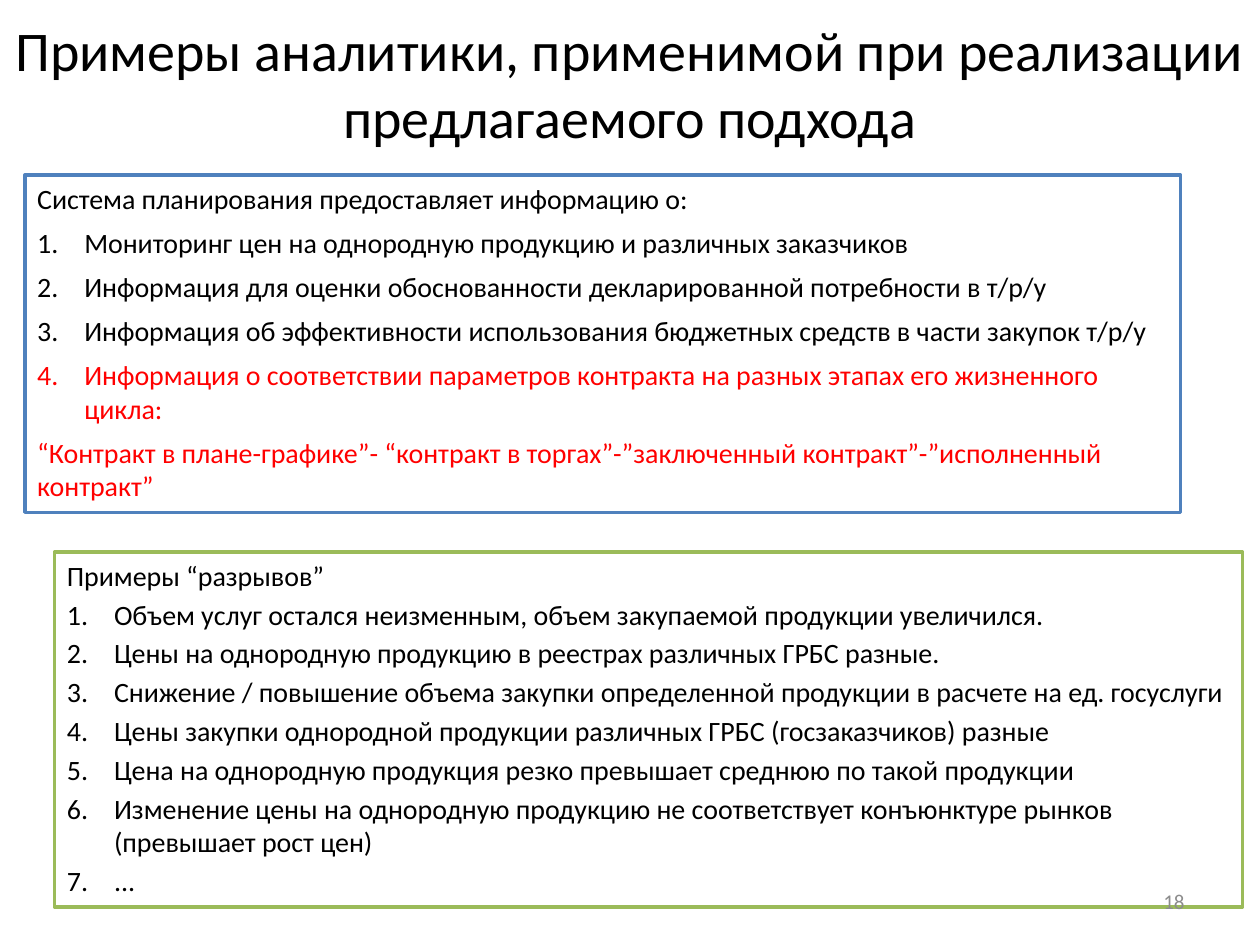
import pptx
import pptx.dml.color
import pptx.enum.shapes
import pptx.enum.text
import pptx.oxml
import pptx.oxml.ns
import pptx.util
from pptx.util import Cm

COLORS = {
    "text": "000000",
    "accent": "FF0000",
    "page": "8C8C8C",
    "paper": "FFFFFF",
    "blue": "4F81BD",
    "green": "9BBB59",
}
FONT = "Calibri"
ALIGN = pptx.enum.text.PP_ALIGN
ANCHOR = pptx.enum.text.MSO_ANCHOR
INDENT = Cm(0.95)

TITLE = "Примеры аналитики, применимой при реализации предлагаемого подхода"
PAGE_NUMBER = "18"

PANELS = [
    {
        "box": (1.1, 11.13, 23.95, 7.16),
        "line": "green",
        "space": 3,
        "paragraphs": [
            ("Примеры “разрывов”", False, "text"),
            ("Объем услуг остался неизменным, объем закупаемой продукции увеличился.", True, "text"),
            ("Цены на однородную продукцию в реестрах различных ГРБС разные.", True, "text"),
            ("Снижение / повышение объема закупки определенной продукции в расчете на ед. госуслуги", True, "text"),
            ("Цены закупки однородной продукции различных ГРБС (госзаказчиков) разные", True, "text"),
            ("Цена на однородную продукция резко превышает среднюю по такой продукции", True, "text"),
            ("Изменение цены на однородную продукцию не соответствует конъюнктуре рынков (превышает рост цен)", True, "text"),
            ("...", True, "text"),
        ],
    },
    {
        "box": (0.5, 3.53, 23.3, 6.8),
        "line": "blue",
        "space": 6,
        "paragraphs": [
            ("Система планирования предоставляет информацию о:", False, "text"),
            ("Мониторинг цен на однородную продукцию и различных заказчиков", True, "text"),
            ("Информация для оценки обоснованности декларированной потребности в т/р/у", True, "text"),
            ("Информация об эффективности использования бюджетных средств в части закупок т/р/у", True, "text"),
            ("Информация о соответствии параметров контракта на разных этапах его жизненного цикла:", True, "accent"),
            ("“Контракт в плане-графике”- “контракт в торгах”-”заключенный контракт”-”исполненный контракт”", False, "accent"),
        ],
    },
]


def color(name):
    return pptx.dml.color.RGBColor.from_string(COLORS[name])


def write(paragraph, text, size, color_name, alignment):
    paragraph.text = text
    paragraph.alignment = alignment
    paragraph.font.name = FONT
    paragraph.font.size = pptx.util.Pt(size)
    paragraph.font.color.rgb = color(color_name)


def number(paragraph):
    properties = paragraph._p.get_or_add_pPr()
    properties.set("marL", str(INDENT))
    properties.set("indent", str(-INDENT))
    bullet = pptx.oxml.parse_xml(
        f'<a:buAutoNum {pptx.oxml.ns.nsdecls("a")} type="arabicPeriod"/>'
    )
    properties.insert_element_before(bullet, "a:tabLst", "a:defRPr", "a:extLst")


def add_label(slide, box, text, size, color_name, alignment):
    frame = slide.shapes.add_textbox(*map(Cm, box)).text_frame
    frame.word_wrap = True
    frame.vertical_anchor = ANCHOR.MIDDLE
    write(frame.paragraphs[0], text, size, color_name, alignment)


def add_panel(slide, panel):
    shape = slide.shapes.add_shape(
        pptx.enum.shapes.MSO_SHAPE.RECTANGLE, *map(Cm, panel["box"])
    )
    shape.shadow.inherit = False
    shape.fill.solid()
    shape.fill.fore_color.rgb = color("paper")
    shape.line.color.rgb = color(panel["line"])
    shape.line.width = pptx.util.Pt(2)
    frame = shape.text_frame
    frame.word_wrap = True
    frame.auto_size = pptx.enum.text.MSO_AUTO_SIZE.SHAPE_TO_FIT_TEXT
    frame.vertical_anchor = ANCHOR.TOP
    for index, (text, numbered, color_name) in enumerate(panel["paragraphs"]):
        paragraph = frame.add_paragraph() if index else frame.paragraphs[0]
        write(paragraph, text, 16, color_name, ALIGN.LEFT)
        paragraph.space_before = pptx.util.Pt(panel["space"])
        if numbered:
            number(paragraph)


def main():
    presentation = pptx.Presentation()
    presentation.slide_width = Cm(25.4)
    presentation.slide_height = Cm(19.05)
    slide = presentation.slides.add_slide(presentation.slide_layouts[6])
    add_label(slide, (0, 0, 25.4, 3.33), TITLE, 32, "text", ALIGN.CENTER)
    for panel in PANELS:
        add_panel(slide, panel)
    add_label(slide, (18.2, 17.66, 5.93, 1.01), PAGE_NUMBER, 12, "page", ALIGN.RIGHT)
    presentation.save("out.pptx")


if __name__ == "__main__":
    main()
